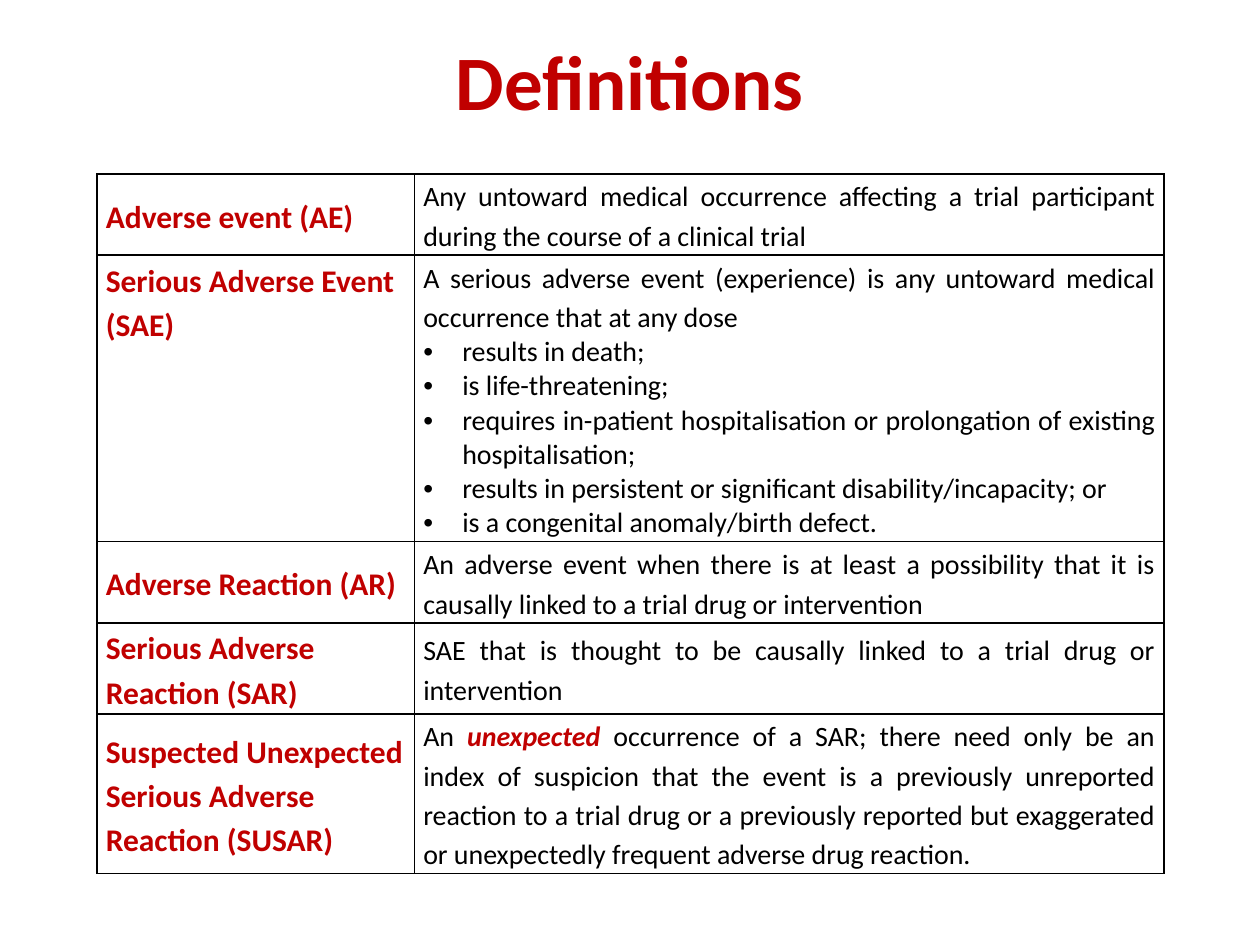
from lxml import etree
from pptx import Presentation
from pptx.dml.color import RGBColor
from pptx.enum.text import MSO_ANCHOR, PP_ALIGN
from pptx.oxml import parse_xml
from pptx.oxml.ns import nsdecls, qn
from pptx.util import Inches, Pt

TOP, MIDDLE = MSO_ANCHOR.TOP, MSO_ANCHOR.MIDDLE
LEFT, CENTER, JUSTIFY = PP_ALIGN.LEFT, PP_ALIGN.CENTER, PP_ALIGN.JUSTIFY
RED, BLACK = "C00000", "000000"
FONT = "Calibri"
KEYWORD = "unexpected "


def style_run(r, size, color, bold, italic=False):
    r.font.name = FONT
    r.font.size = Pt(size)
    r.font.bold = bold
    r.font.italic = italic
    r.font.color.rgb = RGBColor.from_string(color)


def format_cell(cell, anchor):
    cell.vertical_anchor = anchor
    cell.margin_left = cell.margin_right = Inches(0.07)
    cell.margin_top = cell.margin_bottom = Inches(0.01)
    cell.fill.background()
    tcPr = cell._tc.get_or_add_tcPr()
    for i, side in enumerate("LRTB"):
        tcPr.insert(i, parse_xml(
            f'<a:ln{side} {nsdecls("a")} w="12700"><a:solidFill>'
            f'<a:srgbClr val="{BLACK}"/></a:solidFill></a:ln{side}>'))


# Each row: height, anchor, term, definition runs, bullets
ROWS = [
    (0.63, MIDDLE, "Adverse event (AE)",
     ["Any untoward medical occurrence affecting a trial participant during "
      "the course of a clinical trial"], []),
    (2.23, TOP, "Serious Adverse Event (SAE)",
     ["A serious adverse event (experience) is any untoward medical "
      "occurrence that at any dose"],
     ["results in death;",
      "is life-threatening;",
      "requires in-patient hospitalisation or prolongation of existing "
      "hospitalisation; ",
      "results in persistent or significant disability/incapacity; or",
      "is a congenital anomaly/birth defect."]),
    (0.63, MIDDLE, "Adverse Reaction (AR)",
     ["An adverse event when there is at least a possibility that it is "
      "causally linked to a trial drug or intervention"], []),
    (0.63, MIDDLE, "Serious Adverse Reaction (SAR)",
     ["SAE that is thought to be causally linked to a trial drug or "
      "intervention"], []),
    (1.25, MIDDLE, "Suspected Unexpected Serious Adverse Reaction (SUSAR)",
     ["An ", KEYWORD,
      "occurrence of a SAR; there need only be an index of suspicion that the "
      "event is a previously unreported reaction to a trial drug or a "
      "previously reported but exaggerated or unexpectedly frequent adverse "
      "drug reaction."], []),
]

prs = Presentation()
prs.slide_width, prs.slide_height = Inches(10), Inches(7.5)
s = prs.slides.add_slide(prs.slide_layouts[5])

# Title
title = s.shapes.title
title.left, title.top = Inches(0), Inches(0.21)
title.width, title.height = Inches(10), Inches(0.84)
title.text_frame.text = "Definitions"
p = title.text_frame.paragraphs[0]
p.alignment = CENTER
style_run(p.runs[0], 44, RED, True)

# Definitions table
table = s.shapes.add_table(len(ROWS), 2, Inches(0.77), Inches(1.38),
                           Inches(8.46), Inches(5.46)).table
table.first_row = table.horz_banding = False
table.columns[0].width = Inches(2.52)
table.columns[1].width = Inches(5.95)

for i, (height, anchor, term, definition, bullets) in enumerate(ROWS):
    table.rows[i].height = Inches(height)
    term_cell, text_cell = table.cell(i, 0), table.cell(i, 1)
    format_cell(term_cell, anchor)
    format_cell(text_cell, anchor)

    # Term
    term_cell.text_frame.text = term
    p = term_cell.text_frame.paragraphs[0]
    p.alignment = LEFT
    p.line_spacing = 1.15
    style_run(p.runs[0], 18, RED, True)

    # Definition
    tf = text_cell.text_frame
    p = tf.paragraphs[0]
    p.alignment = JUSTIFY
    p.line_spacing = 1.15
    for text in definition:
        r = p.add_run()
        r.text = text
        key = text == KEYWORD
        style_run(r, 16, RED if key else BLACK, key, key)

    # Bulleted criteria
    for text in bullets:
        p = tf.add_paragraph()
        p.text = text
        p.alignment = JUSTIFY
        style_run(p.runs[0], 16, BLACK, False)
        pPr = p._p.get_or_add_pPr()
        pPr.set("marL", str(Inches(0.31)))
        pPr.set("indent", str(-Inches(0.31)))
        color = etree.SubElement(pPr, qn("a:buClr"))
        etree.SubElement(color, qn("a:srgbClr"), val=BLACK)
        etree.SubElement(pPr, qn("a:buFont"), typeface="Arial")
        etree.SubElement(pPr, qn("a:buChar"), char="•")

prs.save("out.pptx")
